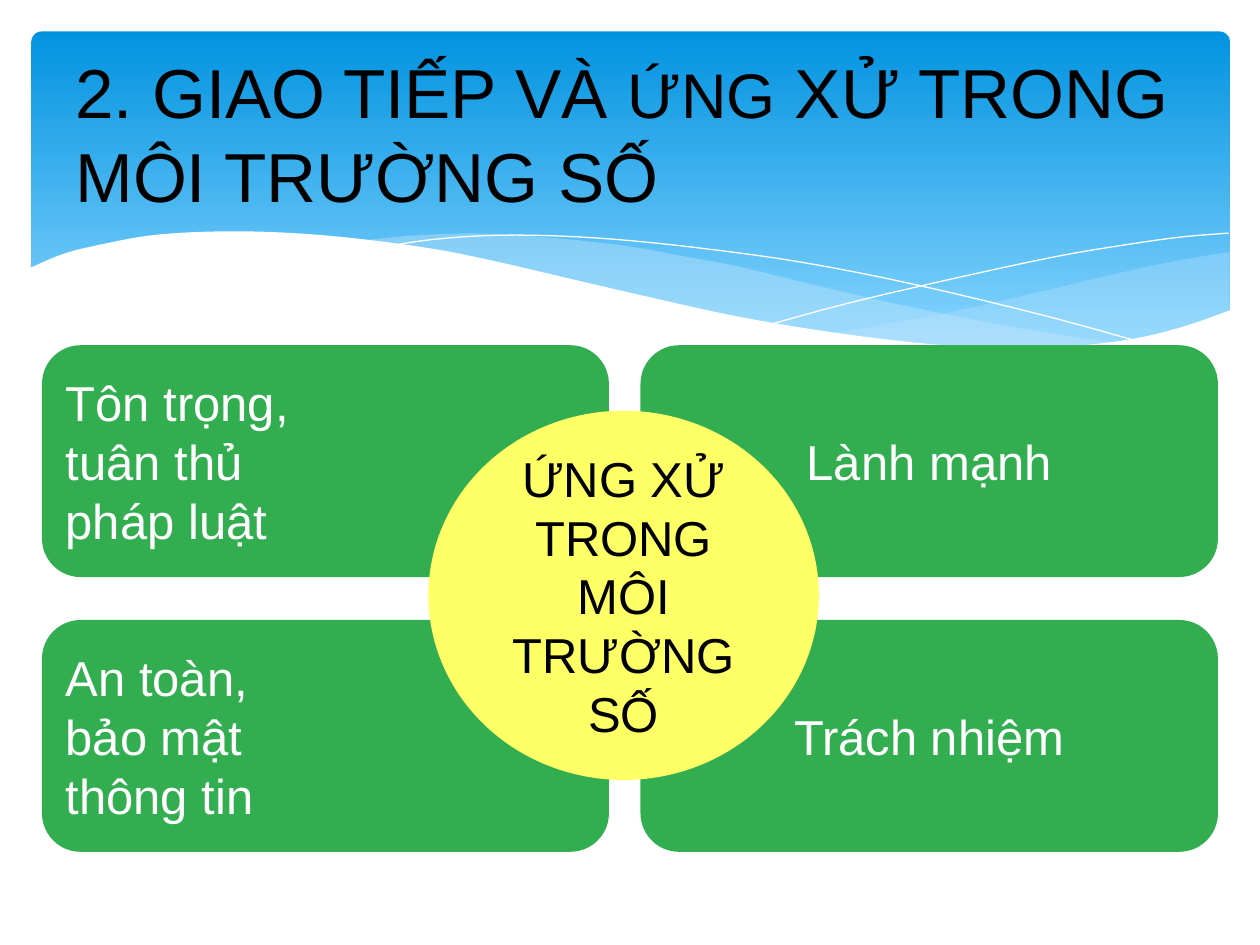
"""Build a slide on conduct in the digital environment: four values around a core."""
import dataclasses

import lxml.etree
import pptx
import pptx.dml.color
import pptx.enum.shapes
import pptx.enum.text
import pptx.oxml.ns
import pptx.shapes.autoshape
import pptx.slide
import pptx.util

Pt = pptx.util.Pt
RGBColor = pptx.dml.color.RGBColor
Kind = pptx.enum.shapes.MSO_SHAPE
Align = pptx.enum.text.PP_ALIGN
Point = tuple[float, float]

BLACK = RGBColor(0x00, 0x00, 0x00)
WHITE = RGBColor(0xFF, 0xFF, 0xFF)
GREEN = RGBColor(0x32, 0xAE, 0x51)
YELLOW = RGBColor(0xFF, 0xFF, 0x66)
SKY_TOP = RGBColor(0x02, 0x93, 0xE0)
SKY_BOTTOM = RGBColor(0x83, 0xD3, 0xFE)
MIST = RGBColor(0xC6, 0xE7, 0xFC)

FRAME_FORMAT = {"word_wrap": True, "vertical_anchor": pptx.enum.text.MSO_ANCHOR.MIDDLE}
CURVE_STEPS = 4
CARD_HEIGHT = 132.5
CARD_ROWS = (197.3, 354.3)
CARD_COLUMNS = ((24, 324, Align.LEFT), (366, 330, Align.CENTER))
CARD_TEXTS = (
    (("Tôn trọng,", "tuân thủ", "pháp luật"), ("Lành mạnh",)),
    (("An toàn,", "bảo mật", "thông tin"), ("Trách nhiệm",)),
)


@dataclasses.dataclass(frozen=True)
class Wave:
    """A wave made of smooth curves that meet at corners; without fill it is a line."""
    curves: tuple[tuple[Point, ...], ...]
    fill: RGBColor | None = None
    opacity: int = 100


@dataclasses.dataclass(frozen=True)
class Panel:
    """A filled preset shape with text."""
    kind: Kind
    left: float
    top: float
    width: float
    height: float
    fill: RGBColor
    color: RGBColor
    align: Align
    lines: tuple[str, ...]


WAVES = (
    Wave((
        ((702.7, 144), (673, 149), (641.5, 155.5), (599, 165.6), (542, 178.6), (476, 190.8)),
        ((476, 190.8), (497.5, 193.7), (527, 197.3), (553.7, 199.4), (586, 200),
         (615, 198.7), (640, 195.8), (663, 190.8), (683.3, 185), (702.7, 177.8)),
    ), MIST, 29),
    Wave((
        ((643, 196.6), (602.6, 190.8), (558, 182.9), (508.3, 172.8), (452.9, 159.8),
         (420.5, 151.9), (389.5, 146.2), (361.4, 141.1), (318.2, 136.1), (273.6, 133.4),
         (236.2, 134.6), (205.9, 137.5)),
        ((205.9, 137.5), (246.2, 143.3), (290.9, 151.9), (323.3, 159.8), (381.6, 172.8),
         (432.7, 183.6), (478.8, 191.5), (519.8, 197.3), (556.6, 199.6), (589, 200.2),
         (617, 199.4), (643, 196.6)),
    ), MIST, 40),
    Wave((
        ((222.5, 140.4), (247.7, 136.8), (278.6, 134.6), (311.8, 134.6), (352, 136.8),
         (400.3, 141.8), (457.9, 149.8), (523.4, 162.7), (598.3, 180.7), (653, 195.8)),
    )),
    Wave((
        ((441.4, 185), (483.8, 173.5), (538.6, 160.6), (601.9, 146.9), (644.4, 139.7),
         (675.4, 135.4), (702, 133.2)),
    )),
    Wave((
        ((703.4, 177.1), (676.8, 186.5), (647.3, 193.7), (612, 198), (582.5, 199.4),
         (547.9, 198), (509.8, 194.4), (466.6, 188.6), (416.9, 180), (362.2, 167.8),
         (321.8, 158.4), (281.5, 149), (244.8, 141.8), (195.1, 135.4), (151.9, 132.5),
         (115.9, 132.5), (85.7, 134.6), (61.2, 139), (37.4, 144.7), (16.6, 153.4)),
        ((16.6, 236.9), (703.4, 236.9)),
    ), WHITE),
)


def apply_format(target: object, values: dict[str, object]) -> None:
    """Set each named attribute of the target."""
    for name, value in values.items():
        setattr(target, name, value)


def smooth_curve(points: tuple[Point, ...]) -> list[Point]:
    """Return points along a Catmull-Rom spline through the given points."""
    padded = (points[0], *points, points[-1])
    result = [points[0]]
    for a, b, c, d in zip(padded, padded[1:], padded[2:], padded[3:]):
        for step in range(1, CURVE_STEPS + 1):
            t = step / CURVE_STEPS
            result.append(tuple(
                q + t * (r - p) / 2
                + t ** 2 * (2 * p - 5 * q + 4 * r - s) / 2
                + t ** 3 * (3 * q - p - 3 * r + s) / 2
                for p, q, r, s in zip(a, b, c, d)))
    return result


def add_wave(page: pptx.slide.Slide, wave: Wave) -> None:
    """Draw one wave as a translucent area or a hairline."""
    points = [(Pt(x), Pt(y)) for curve in wave.curves for x, y in smooth_curve(curve)]
    builder = page.shapes.build_freeform(*points[0])
    builder.add_line_segments(points[1:], close=wave.fill is not None)
    shape = builder.convert_to_shape()
    shape.shadow.inherit = False
    if wave.fill is None:
        shape.fill.background()
        shape.line.color.rgb = WHITE
        shape.line.width = Pt(0)
        return
    shape.line.fill.background()
    shape.fill.solid()
    shape.fill.fore_color.rgb = wave.fill
    if wave.opacity < 100:
        qn = pptx.oxml.ns.qn
        color = shape._element.spPr.find(qn("a:solidFill")).find(qn("a:srgbClr"))
        lxml.etree.SubElement(color, qn("a:alpha"), val=str(wave.opacity * 1000))


def add_banner(page: pptx.slide.Slide) -> None:
    """Draw the sky gradient behind the title."""
    banner = page.shapes.add_shape(
        Kind.ROUNDED_RECTANGLE, Pt(18), Pt(18), Pt(684.7), Pt(194.4))
    banner.adjustments[0] = 0.03
    banner.shadow.inherit = False
    banner.line.fill.background()
    banner.fill.gradient()
    banner.fill.gradient_angle = 270
    stops = ((0, SKY_TOP), (0.9, SKY_BOTTOM))
    for stop, (position, color) in zip(banner.fill.gradient_stops, stops):
        stop.position = position
        stop.color.rgb = color


def add_span(para: object, text: str, size: float, color: RGBColor) -> None:
    """Append a text run to the paragraph."""
    span = para.add_run()
    span.text = text
    apply_format(span.font, {"name": "Arial", "size": Pt(size)})
    span.font.color.rgb = color


def add_title(page: pptx.slide.Slide) -> None:
    """Write the slide title."""
    box = page.shapes.add_textbox(Pt(36), Pt(26.6), Pt(648), Pt(98.6))
    apply_format(box.text_frame, FRAME_FORMAT)
    para = box.text_frame.paragraphs[0]
    spans = (("2. GIAO TIẾP VÀ ", 39.6), ("ỨNG", 36), (" XỬ TRONG MÔI TRƯỜNG SỐ", 39.6))
    for text, size in spans:
        add_span(para, text, size, BLACK)


def add_panel(page: pptx.slide.Slide, panel: Panel) -> None:
    """Draw one panel with a paragraph per line of text."""
    shape = page.shapes.add_shape(
        panel.kind, Pt(panel.left), Pt(panel.top), Pt(panel.width), Pt(panel.height))
    shape.shadow.inherit = False
    shape.line.fill.background()
    shape.fill.solid()
    shape.fill.fore_color.rgb = panel.fill
    frame = shape.text_frame
    apply_format(frame, FRAME_FORMAT)
    for index, line in enumerate(panel.lines):
        para = frame.add_paragraph() if index else frame.paragraphs[0]
        para.alignment = panel.align
        add_span(para, line, 28, panel.color)


def main() -> None:
    """Build and save the deck."""
    deck = pptx.Presentation()
    apply_format(deck, {"slide_width": Pt(720), "slide_height": Pt(540)})
    page = deck.slides.add_slide(deck.slide_layouts[6])
    add_banner(page)
    for wave in WAVES:
        add_wave(page, wave)
    add_title(page)
    for top, row in zip(CARD_ROWS, CARD_TEXTS):
        for (left, width, align), lines in zip(CARD_COLUMNS, row):
            add_panel(page, Panel(Kind.ROUNDED_RECTANGLE, left, top, width, CARD_HEIGHT,
                                  GREEN, WHITE, align, lines))
    add_panel(page, Panel(Kind.OVAL, 244.8, 234.7, 223.2, 211, YELLOW, BLACK,
                          Align.CENTER, ("ỨNG XỬ TRONG MÔI TRƯỜNG SỐ",)))
    deck.save("out.pptx")


if __name__ == "__main__":
    main()
